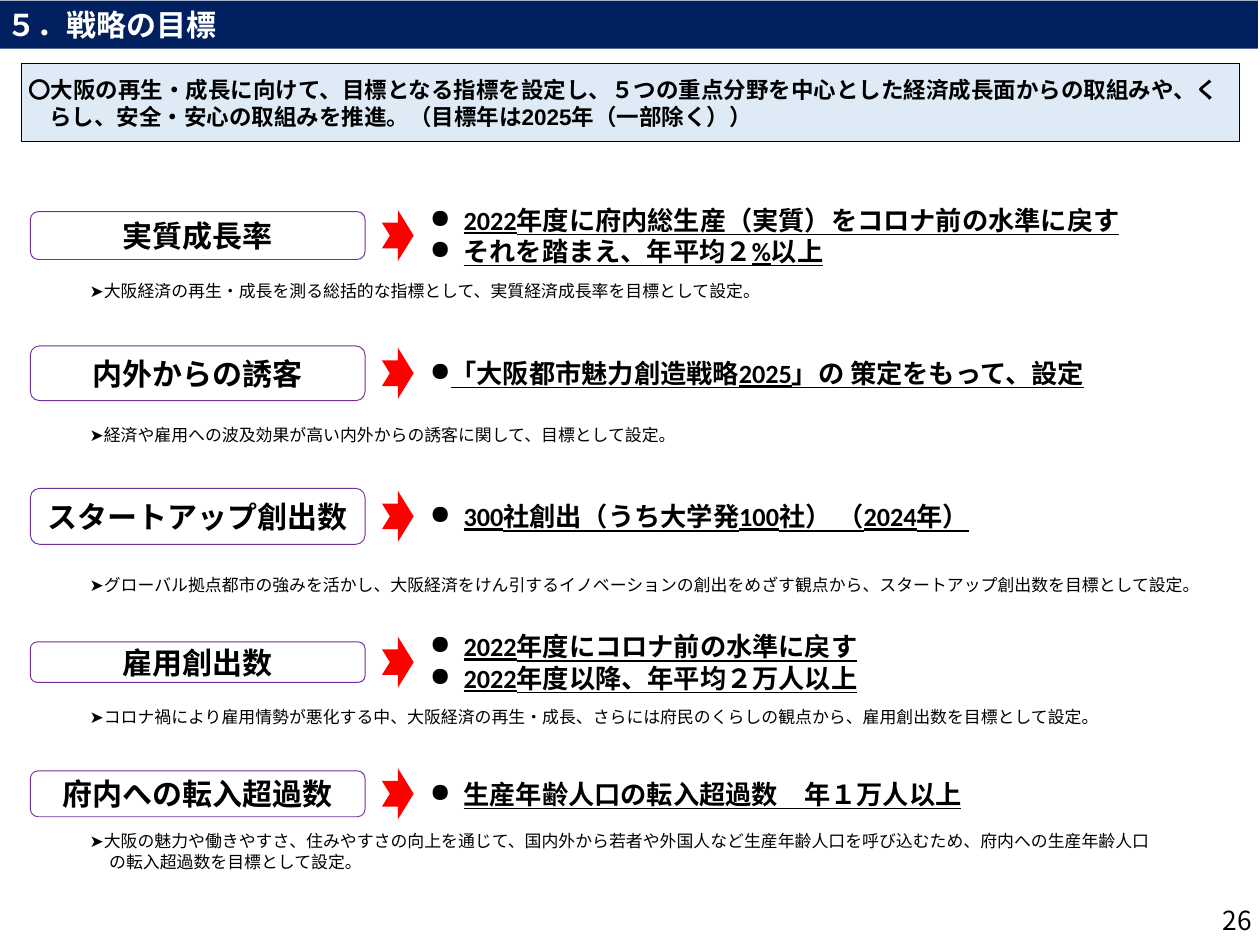
from lxml import etree
from pptx import Presentation
from pptx.dml.color import RGBColor
from pptx.enum.shapes import MSO_SHAPE
from pptx.enum.text import MSO_ANCHOR, MSO_AUTO_SIZE, PP_ALIGN
from pptx.oxml.ns import qn
from pptx.util import Inches, Pt

RECT, ROUNDED = MSO_SHAPE.RECTANGLE, MSO_SHAPE.ROUNDED_RECTANGLE
ARROW = MSO_SHAPE.NOTCHED_RIGHT_ARROW
LEFT, CENTER, RIGHT = PP_ALIGN.LEFT, PP_ALIGN.CENTER, PP_ALIGN.RIGHT
MIDDLE, NO_AUTOFIT = MSO_ANCHOR.MIDDLE, MSO_AUTO_SIZE.NONE

NAVY = RGBColor(0x00, 0x20, 0x60)
PALE_BLUE = RGBColor(0xDE, 0xEB, 0xF7)
PURPLE = RGBColor(0x70, 0x30, 0xA0)
RED = RGBColor(0xFF, 0x00, 0x00)
BLACK = RGBColor(0x00, 0x00, 0x00)
WHITE = RGBColor(0xFF, 0xFF, 0xFF)
JAPANESE_FONT = "Noto Sans CJK JP"


def add_box(kind, left, top, width, height, fill=None, line=None, line_width=1):
    box = slide.shapes.add_shape(
        kind, Inches(left), Inches(top), Inches(width), Inches(height))
    box.shadow.inherit = False
    if fill is None:
        box.fill.background()
    else:
        box.fill.solid()
        box.fill.fore_color.rgb = fill
    if line is None:
        box.line.fill.background()
    else:
        box.line.color.rgb = line
        box.line.width = Pt(line_width)
    return box


def write(shape, lines, size, font, align=LEFT, color=BLACK, bold=False,
          underline=None, margin=0, indent=0, bullet=None):
    """Fill a shape with one formatted paragraph per line."""
    frame = shape.text_frame
    frame.word_wrap = True
    frame.auto_size = NO_AUTOFIT
    frame.vertical_anchor = MIDDLE
    frame.text = "\n".join(lines)
    for paragraph in frame.paragraphs:
        paragraph.alignment = align
        properties = paragraph._p.get_or_add_pPr()
        properties.set("marL", str(Inches(margin)))
        properties.set("indent", str(Inches(indent)))
        if bullet:
            etree.SubElement(properties, qn("a:buChar")).set("char", bullet)
        style = paragraph.font
        style.size = Pt(size)
        style.bold = bold
        style.underline = underline
        style.color.rgb = color
        style.name = font
        east_asian = etree.SubElement(properties.find(qn("a:defRPr")), qn("a:ea"))
        east_asian.set("typeface", JAPANESE_FONT)


prs = Presentation()
prs.slide_width, prs.slide_height = Inches(18.67), Inches(14)
slide = prs.slides.add_slide(prs.slide_layouts[5])

title = slide.shapes.title
title.left, title.top = Inches(-0.01), Inches(0.01)
title.width, title.height = Inches(18.65), Inches(0.71)
title.fill.solid()
title.fill.fore_color.rgb = NAVY
write(title, ["５．戦略の目標"], 32, "Arial", color=WHITE, bold=True)

summary = add_box(RECT, 0.32, 0.94, 18.05, 1.16, PALE_BLUE, BLACK, 0.75)
write(summary, ["〇大阪の再生・成長に向けて、目標となる指標を設定し、５つの重点分野を中心とした"
                "経済成長面からの取組みや、くらし、安全・安心の取組みを推進。"
                "（目標年は2025年（一部除く））"],
      24, "Arial", bold=True, margin=0.31, indent=-0.5)

# row centre, (label, height), (goals, width, height, margin),
# (note, centre, width, height, margin)
targets = [
    (3.49, ("実質成長率", 0.71),
     (["2022年度に府内総生産（実質）をコロナ前の水準に戻す",
       "それを踏まえ、年平均２%以上"], 10.96, 1.5, 0.5),
     ("➤大阪経済の再生・成長を測る総括的な指標として、実質経済成長率を目標として設定。",
      4.3, 15.81, 0.65, 0.29)),
    (5.53, ("内外からの誘客", 0.81),
     (["「大阪都市魅力創造戦略2025」の 策定をもって、設定"], 10.34, 1.14, 0.08),
     ("➤経済や雇用への波及効果が高い内外からの誘客に関して、目標として設定。",
      6.44, 16.85, 0.58, 0.29)),
    (7.65, ("スタートアップ創出数", 0.83),
     (["300社創出（うち大学発100社） （2024年）"], 9.17, 1.11, 0.5),
     ("➤グローバル拠点都市の強みを活かし、大阪経済をけん引するイノベーションの創出を"
      "めざす観点から、スタートアップ創出数を目標として設定。",
      8.66, 17.85, 0.88, 0.12)),
    (9.81, ("雇用創出数", 0.6),
     (["2022年度にコロナ前の水準に戻す",
       "2022年度以降、年平均２万人以上"], 10.78, 1.26, 0.5),
     ("➤コロナ禍により雇用情勢が悪化する中、大阪経済の再生・成長、さらには府民の"
      "くらしの観点から、雇用創出数を目標として設定。",
      10.62, 15.15, 0.66, 0.12)),
    (11.76, ("府内への転入超過数", 0.68),
     (["生産年齢人口の転入超過数　年１万人以上"], 11, 0.77, 0.5),
     ("➤大阪の魅力や働きやすさ、住みやすさの向上を通じて、国内外から若者や外国人など"
      "生産年齢人口を呼び込むため、府内への生産年齢人口の転入超過数を目標として設定。",
      12.61, 16.06, 0.82, 0.29)),
]

for center, label, goal, note in targets:
    name, height = label
    label_box = add_box(ROUNDED, 0.45, center - height / 2, 4.96, height, line=PURPLE)
    write(label_box, [name], 32, "Calibri", CENTER, bold=True)

    add_box(ARROW, 5.66, center - 0.38, 0.47, 0.76, RED)

    goals, width, height, margin = goal
    goal_box = add_box(ROUNDED, 6.27, center - height / 2, width, height)
    goal_box.adjustments[0] = 0
    write(goal_box, goals, 28, "Calibri", bold=True, underline=True,
          margin=margin, indent=-0.5, bullet="●")

    reason, note_center, width, height, margin = note
    note_box = add_box(ROUNDED, 1.23, note_center - height / 2, width, height)
    note_box.adjustments[0] = 0
    write(note_box, [reason], 18, "Arial", margin=margin, indent=-0.29)

page_number = slide.shapes.add_textbox(
    Inches(17.71), Inches(13.25), Inches(0.94), Inches(0.75))
write(page_number, ["26"], 28, JAPANESE_FONT, RIGHT)

prs.save("out.pptx")
